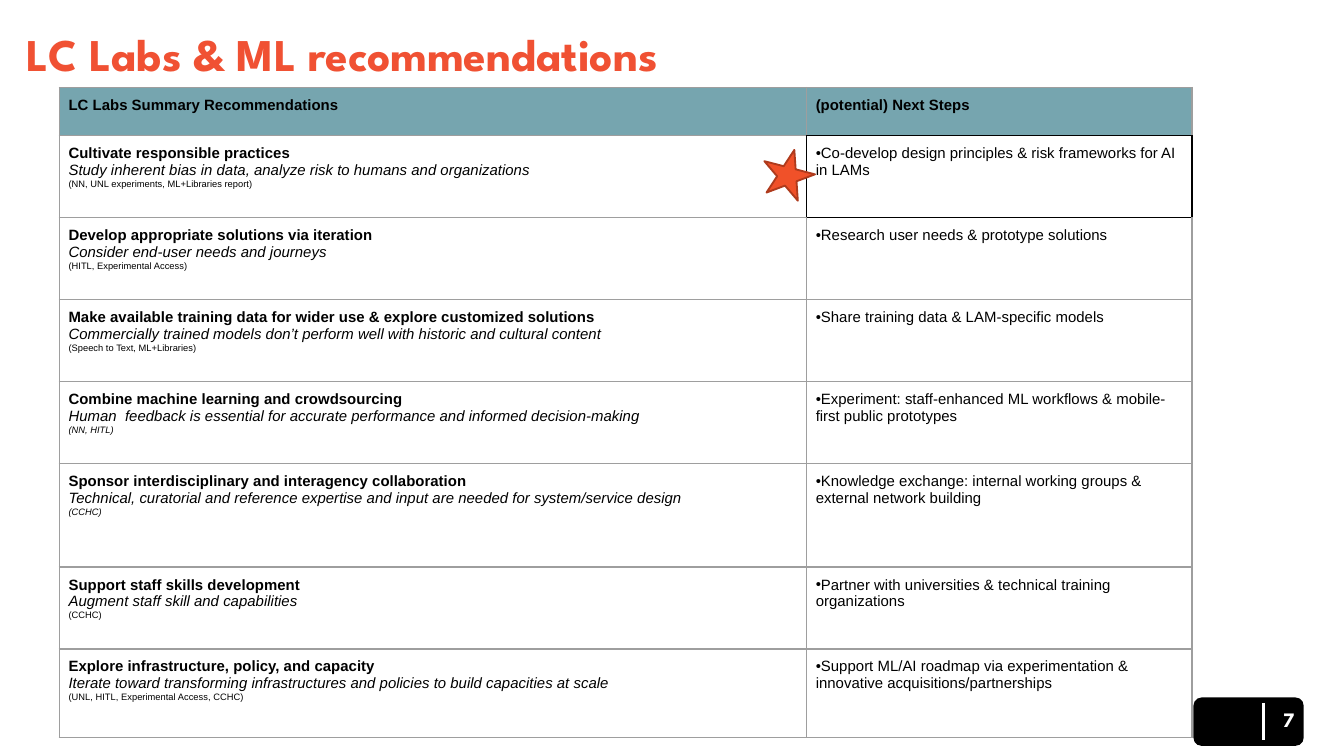
"""Build the slide of machine learning recommendations and next steps."""
from typing import NamedTuple

from lxml.etree import SubElement
from pptx import Presentation
from pptx.dml.color import RGBColor
from pptx.enum.shapes import MSO_CONNECTOR, MSO_SHAPE
from pptx.enum.text import MSO_ANCHOR, PP_ALIGN
from pptx.oxml import parse_xml
from pptx.oxml.ns import nsdecls, qn
from pptx.util import Inches, Pt

COLORS = {
    "title": "F05133",
    "header": "76A5AF",
    "border": "9E9E9E",
    "black": "000000",
    "white": "FFFFFF",
    "star": "F05129",
    "star_line": "AF3B1D",
}
HEADING_FONT = "League Spartan"
BODY_FONT = "Arial"
SLIDE_WIDTH = 10
SLIDE_HEIGHT = SLIDE_WIDTH * 9 / 16
COLUMN_WIDTHS = [5.56, 2.87]
ROW_HEIGHTS = [0.36, 0.61, 0.61, 0.61, 0.61, 0.77, 0.61, 0.66]
HEADERS = ["LC Labs Summary Recommendations", "(potential) Next Steps"]
HIGHLIGHTED_CELL = (1, 1)
SIDES = {"lnL": (0, -1), "lnR": (0, 1), "lnT": (-1, 0), "lnB": (1, 0)}


class Recommendation(NamedTuple):
    """One table row."""

    heading: str
    detail: str
    evidence: str
    next_step: str
    italic_evidence: bool = False


RECOMMENDATIONS = [
    Recommendation(
        "Cultivate responsible practices",
        "Study inherent bias in data, analyze risk to humans and organizations",
        "(NN, UNL experiments, ML+Libraries report)",
        "Co-develop design principles & risk frameworks for AI in LAMs",
    ),
    Recommendation(
        "Develop appropriate solutions via iteration",
        "Consider end-user needs and journeys",
        "(HITL, Experimental Access)",
        "Research user needs & prototype solutions",
    ),
    Recommendation(
        "Make available training data for wider use & explore customized solutions",
        "Commercially trained models don’t perform well with historic and cultural content",
        "(Speech to Text, ML+Libraries)",
        "Share training data & LAM-specific models",
    ),
    Recommendation(
        "Combine machine learning and crowdsourcing",
        "Human  feedback is essential for accurate performance and informed decision-making",
        "(NN, HITL)",
        "Experiment: staff-enhanced ML workflows & mobile-first public prototypes",
        True,
    ),
    Recommendation(
        "Sponsor interdisciplinary and interagency collaboration",
        "Technical, curatorial and reference expertise and input are needed for system/service design",
        "(CCHC)",
        "Knowledge exchange: internal working groups & external network building",
        True,
    ),
    Recommendation(
        "Support staff skills development",
        "Augment staff skill and capabilities",
        "(CCHC)",
        "Partner with universities & technical training organizations",
    ),
    Recommendation(
        "Explore infrastructure, policy, and capacity",
        "Iterate toward transforming infrastructures and policies to build capacities at scale",
        "(UNL, HITL, Experimental Access, CCHC)",
        "Support ML/AI roadmap via experimentation & innovative acquisitions/partnerships",
    ),
]


def color(name: str) -> RGBColor:
    """Look up a named colour."""
    return RGBColor.from_string(COLORS[name])


def add_run(paragraph, text: str, size: float, font: str = BODY_FONT,
            color_name: str = "black", bold: bool = False, italic: bool = False) -> None:
    """Add one formatted run."""
    run = paragraph.add_run()
    run.text = text
    run.font.size = Pt(size)
    run.font.name = font
    run.font.bold = bold
    run.font.italic = italic
    run.font.color.rgb = color(color_name)


def set_frame(text_frame) -> None:
    """Centre a heading frame vertically and set its insets."""
    text_frame.word_wrap = True
    text_frame.vertical_anchor = MSO_ANCHOR.MIDDLE
    text_frame.margin_left = text_frame.margin_right = Inches(0.07)
    text_frame.margin_top = text_frame.margin_bottom = Inches(0.04)


def add_title(slide) -> None:
    """Place the title in its placeholder."""
    title = slide.shapes.title
    title.left, title.top = Inches(0.13), Inches(0.19)
    title.width, title.height = Inches(9.57), Inches(0.46)
    set_frame(title.text_frame)
    paragraph = title.text_frame.paragraphs[0]
    paragraph.alignment = PP_ALIGN.LEFT
    paragraph.line_spacing = 0.9
    add_run(paragraph, "LC Labs & ML recommendations", 24.3, HEADING_FONT, "title", bold=True)


def add_page_number(slide) -> None:
    """Draw the page number on its black badge."""
    badge = slide.shapes.add_shape(
        MSO_SHAPE.ROUNDED_RECTANGLE, Inches(8.88), Inches(5.19), Inches(0.82), Inches(0.36))
    badge.shadow.inherit = False
    badge.fill.solid()
    badge.fill.fore_color.rgb = color("black")
    badge.line.fill.background()

    divider = slide.shapes.add_connector(
        MSO_CONNECTOR.STRAIGHT, Inches(9.4), Inches(5.23), Inches(9.4), Inches(5.51))
    divider.line.color.rgb = color("white")
    divider.line.width = Pt(1.5)
    SubElement(divider.element.spPr, qn("a:effectLst"))

    number = slide.shapes.add_textbox(Inches(7.45), Inches(5.21), Inches(2.25), Inches(0.29))
    set_frame(number.text_frame)
    paragraph = number.text_frame.paragraphs[0]
    paragraph.alignment = PP_ALIGN.RIGHT
    add_run(paragraph, "7", 11, HEADING_FONT, "white", bold=True)


def format_cell(cell, row: int, column: int) -> None:
    """Set the insets, fill and borders of a table cell."""
    cell.margin_left = cell.margin_right = Inches(0.07)
    cell.margin_top = cell.margin_bottom = Inches(0.07)
    if row == 0:
        cell.fill.solid()
        cell.fill.fore_color.rgb = color("header")
    else:
        cell.fill.background()
    properties = cell._tc.get_or_add_tcPr()
    for index, (side, (row_step, column_step)) in enumerate(SIDES.items()):
        neighbours = [(row, column), (row + row_step, column + column_step)]
        line_color = COLORS["black" if HIGHLIGHTED_CELL in neighbours else "border"]
        properties.insert(index, parse_xml(
            f'<a:{side} {nsdecls("a")} w="{Pt(0.75)}"><a:solidFill>'
            f'<a:srgbClr val="{line_color}"/></a:solidFill></a:{side}>'))


def write_recommendation(cell, item: Recommendation) -> None:
    """Write the heading, detail and evidence lines."""
    text_frame = cell.text_frame
    add_run(text_frame.paragraphs[0], item.heading, 8, bold=True)
    add_run(text_frame.add_paragraph(), item.detail, 8, italic=True)
    add_run(text_frame.add_paragraph(), item.evidence, 5, italic=item.italic_evidence)


def write_next_step(cell, text: str) -> None:
    """Write one bulleted next step."""
    paragraph = cell.text_frame.paragraphs[0]
    properties = paragraph._p.get_or_add_pPr()
    properties.set("marL", "0")
    properties.set("indent", str(Inches(-0.06)))
    bullet_color = SubElement(properties, qn("a:buClr"))
    SubElement(bullet_color, qn("a:srgbClr"), val=COLORS["black"])
    SubElement(properties, qn("a:buFont"), typeface=BODY_FONT)
    SubElement(properties, qn("a:buChar"), char="•")
    add_run(paragraph, text, 8)


def add_recommendation_table(slide) -> None:
    """Draw the table of recommendations."""
    table = slide.shapes.add_table(
        len(ROW_HEIGHTS), len(COLUMN_WIDTHS), Inches(0.44), Inches(0.65),
        Inches(sum(COLUMN_WIDTHS)), Inches(sum(ROW_HEIGHTS))).table
    table.first_row = table.horz_banding = False
    for column, width in zip(table.columns, COLUMN_WIDTHS):
        column.width = Inches(width)
    for row_index, height in enumerate(ROW_HEIGHTS):
        table.rows[row_index].height = Inches(height)
        for column_index in range(len(COLUMN_WIDTHS)):
            format_cell(table.cell(row_index, column_index), row_index, column_index)
    for column_index, header in enumerate(HEADERS):
        add_run(table.cell(0, column_index).text_frame.paragraphs[0], header, 8, bold=True)
    for row_index, item in enumerate(RECOMMENDATIONS, start=1):
        write_recommendation(table.cell(row_index, 0), item)
        write_next_step(table.cell(row_index, 1), item.next_step)


def add_star(slide) -> None:
    """Mark the highlighted next step with a star."""
    star = slide.shapes.add_shape(
        MSO_SHAPE.STAR_5_POINT, Inches(5.67), Inches(1.11), Inches(0.39), Inches(0.36))
    star.rotation = 14.6
    star.shadow.inherit = False
    star.fill.solid()
    star.fill.fore_color.rgb = color("star")
    star.line.color.rgb = color("star_line")
    star.line.width = Pt(1)


def main() -> None:
    """Build and save the presentation."""
    presentation = Presentation()
    presentation.slide_width = Inches(SLIDE_WIDTH)
    presentation.slide_height = Inches(SLIDE_HEIGHT)
    slide = presentation.slides.add_slide(presentation.slide_layouts[5])
    add_page_number(slide)
    add_title(slide)
    add_recommendation_table(slide)
    add_star(slide)
    presentation.save("out.pptx")


if __name__ == "__main__":
    main()
